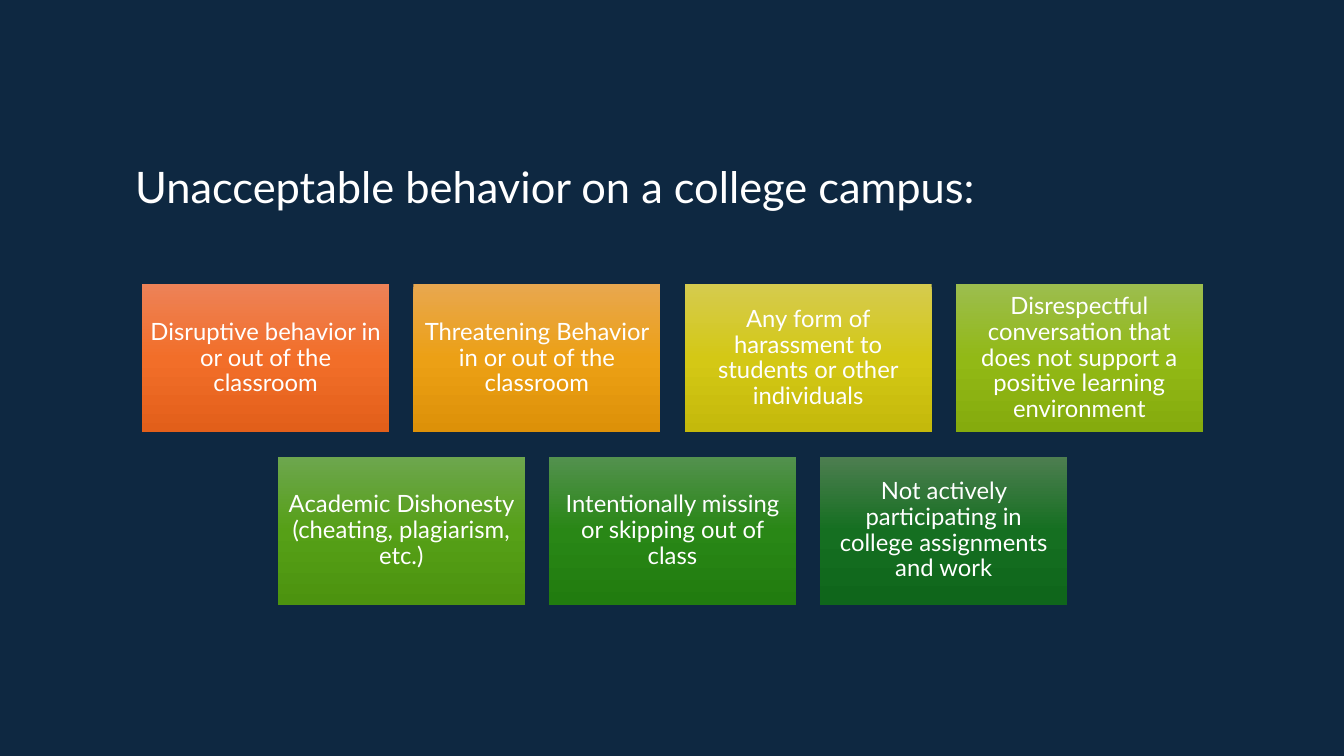
from copy import deepcopy

from pptx import Presentation
from pptx.dml.color import RGBColor
from pptx.enum.shapes import MSO_SHAPE as Shape
from pptx.enum.text import MSO_ANCHOR as Anchor, MSO_AUTO_SIZE as AutoSize, PP_ALIGN as Align
from pptx.oxml.ns import qn
from pptx.util import Inches, Pt

FONT = "Lato"
COLORS = {"background": "0E2841", "text": "FFFFFF"}
CARD_WIDTH, CARD_HEIGHT, GAP = 2.45, 1.47, 0.24
ROWS_CENTER, ROWS_TOP = 6.67, 2.82

# Each card: wording, then its top, middle and bottom gradient colors
CARD_ROWS = [
    [
        ("Disruptive behavior in or out of the classroom", ("ED8257", "F26E29", "E25F1A")),
        ("Threatening Behavior in or out of the classroom", ("E8A74F", "ECA015", "DD9108")),
        ("Any form of harassment to students or other individuals", ("D5CB4E", "D4C815", "C4B90B")),
        ("Disrespectful conversation that does not support a positive learning environment",
         ("9CBD4E", "92B916", "85AB0D")),
    ],
    [
        ("Academic Dishonesty (cheating, plagiarism, etc.)", ("6DA64E", "56A017", "4C930F")),
        ("Intentionally missing or skipping out of class", ("53914E", "298716", "217C0F")),
        ("Not actively participating in college assignments and work", ("4D7E50", "156F21", "0F661B")),
    ],
]


def write_text(frame, text, size, alignment):
    frame.word_wrap = True
    frame.auto_size = AutoSize.NONE
    frame.vertical_anchor = Anchor.MIDDLE
    paragraph = frame.paragraphs[0]
    paragraph.alignment = alignment
    paragraph.line_spacing = 0.9
    run = paragraph.add_run()
    run.text = text
    run.font.name = FONT
    run.font.size = Pt(size)
    run.font.color.rgb = RGBColor.from_string(COLORS["text"])


def fill_downward(shape, colors):
    """Fill the shape with evenly spaced gradient colors from top to bottom."""
    fill = shape.fill
    fill.gradient()
    fill.gradient_angle = 270
    stop_list = shape.element.spPr.find(qn("a:gradFill")).find(qn("a:gsLst"))
    stop_list.insert(1, deepcopy(stop_list[0]))
    for index, (stop, color) in enumerate(zip(fill.gradient_stops, colors)):
        stop.position = index / (len(colors) - 1)
        stop.color.rgb = RGBColor.from_string(color)


presentation = Presentation()
presentation.slide_width = Inches(13.33)
presentation.slide_height = Inches(7.5)
slide = presentation.slides.add_slide(presentation.slide_layouts[5])
slide.background.fill.solid()
slide.background.fill.fore_color.rgb = RGBColor.from_string(COLORS["background"])

title = slide.shapes.title
title.left, title.top = Inches(1.24), Inches(1.49)
title.width, title.height = Inches(9.58), Inches(0.77)
write_text(title.text_frame, "Unacceptable behavior on a college campus:", 31, Align.LEFT)

for row, cards in enumerate(CARD_ROWS):
    row_width = len(cards) * CARD_WIDTH + (len(cards) - 1) * GAP
    row_left = ROWS_CENTER - row_width / 2
    top = ROWS_TOP + row * (CARD_HEIGHT + GAP)
    for column, (text, colors) in enumerate(cards):
        left = row_left + column * (CARD_WIDTH + GAP)
        card = slide.shapes.add_shape(
            Shape.RECTANGLE, Inches(left), Inches(top), Inches(CARD_WIDTH), Inches(CARD_HEIGHT))
        card.shadow.inherit = False
        card.line.fill.background()
        fill_downward(card, colors)
        frame = card.text_frame
        frame.margin_left = frame.margin_right = Inches(0.07)
        frame.margin_top = frame.margin_bottom = Inches(0.07)
        write_text(frame, text, 17, Align.CENTER)

presentation.save("out.pptx")
